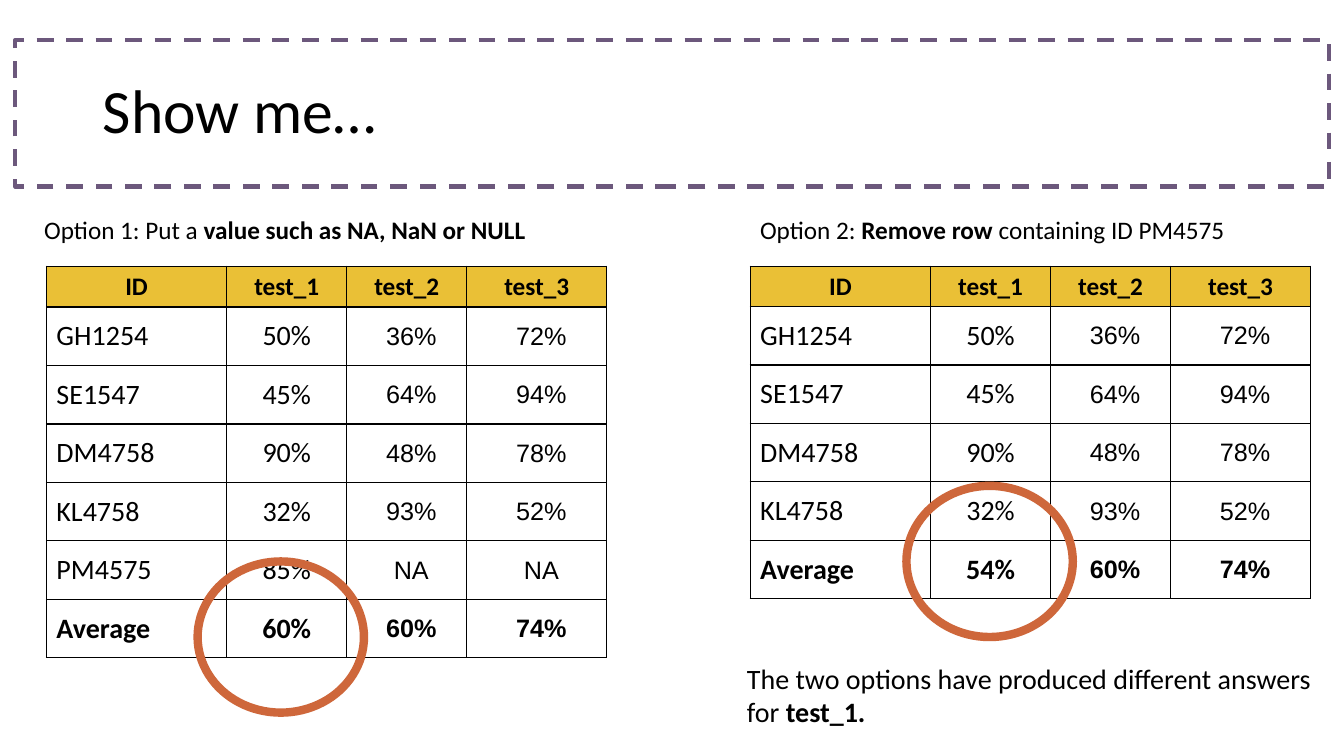
from dataclasses import dataclass

from lxml.etree import SubElement
from pptx import Presentation
from pptx.dml.color import RGBColor
from pptx.enum.dml import MSO_LINE
from pptx.enum.shapes import MSO_SHAPE
from pptx.enum.text import MSO_ANCHOR as Anchor
from pptx.enum.text import PP_ALIGN as Align
from pptx.oxml.ns import qn
from pptx.util import Inches, Pt


@dataclass(frozen=True)
class Theme:
    ink: str = "000000"
    paper: str = "FFFFFF"
    header: str = "EAC036"
    frame: str = "6C587C"
    ring: str = "CE673B"
    main_font: str = "Calibri"
    score_font: str = "Arial"
    title_size: int = 44
    large_size: int = 20
    small_size: int = 18


THEME = Theme()
COLUMN_WIDTHS = [1.79, 1.19, 1.19, 1.39]
HEADER_HEIGHT, ROW_HEIGHT = 0.37, 0.58
HEADINGS = ["ID", "test_1", "test_2", "test_3"]
SHARED_ROWS = [
    ["GH1254", "50%", "36%", "72%"],
    ["SE1547", "45%", "64%", "94%"],
    ["DM4758", "90%", "48%", "78%"],
    ["KL4758", "32%", "93%", "52%"],
]
NA_ROWS = SHARED_ROWS + [["PM4575", "85%", "NA", "NA"], ["Average", "60%", "60%", "74%"]]
REMOVED_ROWS = SHARED_ROWS + [["Average", "54%", "60%", "74%"]]


def apply_format(target, values):
    for name, value in values.items():
        setattr(target, name, value)


def write_runs(paragraph, runs, size, font_name=THEME.main_font):
    for text, bold in runs:
        run = paragraph.add_run()
        run.text = text
        apply_format(run.font, {"name": font_name, "size": Pt(size), "bold": bold})
        run.font.color.rgb = RGBColor.from_string(THEME.ink)


def add_text(slide, box, runs, size):
    text_box = slide.shapes.add_textbox(*map(Inches, box))
    text_box.text_frame.word_wrap = True
    write_runs(text_box.text_frame.paragraphs[0], runs, size)


def add_outline(slide, preset, box, color, width):
    shape = slide.shapes.add_shape(preset, *map(Inches, box))
    shape.shadow.inherit = False
    shape.fill.background()
    shape.line.color.rgb = RGBColor.from_string(color)
    shape.line.width = Pt(width)
    return shape


def add_title(slide, box, text):
    left, top, width, height = box
    frame = add_outline(slide, MSO_SHAPE.RECTANGLE, box, THEME.frame, 3)
    frame.line.dash_style = MSO_LINE.DASH
    title = slide.shapes.title
    title.element.addprevious(frame.element)
    apply_format(title, {
        "left": Inches(left + 0.77), "top": Inches(top),
        "width": Inches(width - 1.53), "height": Inches(height),
    })
    title.text_frame.vertical_anchor = Anchor.MIDDLE
    paragraph = title.text_frame.paragraphs[0]
    apply_format(paragraph, {"alignment": Align.LEFT, "line_spacing": 0.9})
    write_runs(paragraph, [(text, False)], THEME.title_size)


def add_borders(cell):
    properties = cell._tc.get_or_add_tcPr()
    for side in ("a:lnL", "a:lnR", "a:lnT", "a:lnB"):
        line = SubElement(properties, qn(side), w=str(Pt(1)))
        fill = SubElement(line, qn("a:solidFill"))
        SubElement(fill, qn("a:srgbClr"), val=THEME.ink)


def format_cell(cell, text, row, column):
    is_header, is_id = row == 0, column == 0
    is_score = not is_header and column >= 2
    add_borders(cell)
    if is_id and not is_header:
        cell.fill.background()
    else:
        cell.fill.solid()
        cell.fill.fore_color.rgb = RGBColor.from_string(THEME.header if is_header else THEME.paper)
    cell.vertical_anchor = Anchor.MIDDLE
    if is_score:
        apply_format(cell, {
            "margin_left": Inches(0.1), "margin_top": Inches(0.01),
            "margin_right": Inches(0.01), "margin_bottom": 0,
        })
    paragraph = cell.text_frame.paragraphs[0]
    paragraph.alignment = Align.LEFT if is_id and not is_header else Align.CENTER
    size = THEME.small_size if is_header or is_score else THEME.large_size
    return paragraph, size, THEME.score_font if is_score else THEME.main_font


def add_scores(slide, left, top, rows):
    height = HEADER_HEIGHT + ROW_HEIGHT * len(rows)
    box = map(Inches, (left, top, sum(COLUMN_WIDTHS), height))
    table = slide.shapes.add_table(len(rows) + 1, len(HEADINGS), *box).table
    apply_format(table, {"first_row": False, "horz_banding": False})
    for column, width in zip(table.columns, COLUMN_WIDTHS):
        column.width = Inches(width)
    for row_index, values in enumerate([HEADINGS] + rows):
        table.rows[row_index].height = Inches(ROW_HEIGHT if row_index else HEADER_HEIGHT)
        bold = row_index == 0 or values[0] == "Average"
        for column_index, value in enumerate(values):
            cell = table.cell(row_index, column_index)
            paragraph, size, font_name = format_cell(cell, value, row_index, column_index)
            write_runs(paragraph, [(value, bold)], size, font_name)


def add_option(slide, box, caption_left, caption, rows, ring_offset):
    left, top, width, caption_height = box
    ring_left, ring_top = ring_offset
    add_scores(slide, left, top + 0.56, rows)
    add_text(slide, (caption_left, top, width, caption_height), caption, THEME.small_size)
    ring_box = (left + ring_left, top + ring_top, 1.65, 1.5)
    add_outline(slide, MSO_SHAPE.OVAL, ring_box, THEME.ring, 6)


def main():
    presentation = Presentation()
    apply_format(presentation, {"slide_width": Inches(13.33), "slide_height": Inches(7.5)})
    slide = presentation.slides.add_slide(presentation.slide_layouts[5])
    add_title(slide, (0.15, 0.4, 13.03, 1.45), "Show me…")
    add_option(
        slide, (0.46, 2.08, 5.56, 0.71), 0.34,
        [("Option 1: Put a ", False), ("value such as NA, NaN or NULL", True)],
        NA_ROWS, (1.5, 3.49),
    )
    add_option(
        slide, (7.44, 2.08, 5.56, 0.71), 7.44,
        [("Option 2: ", False), ("Remove row ", True), ("containing ID PM4575", False)],
        REMOVED_ROWS, (1.55, 2.74),
    )
    add_text(
        slide, (7.31, 6.51, 5.93, 0.77),
        [("The two options have produced different answers for ", False), ("test_1.", True)],
        THEME.large_size,
    )
    presentation.save("out.pptx")


if __name__ == "__main__":
    main()
